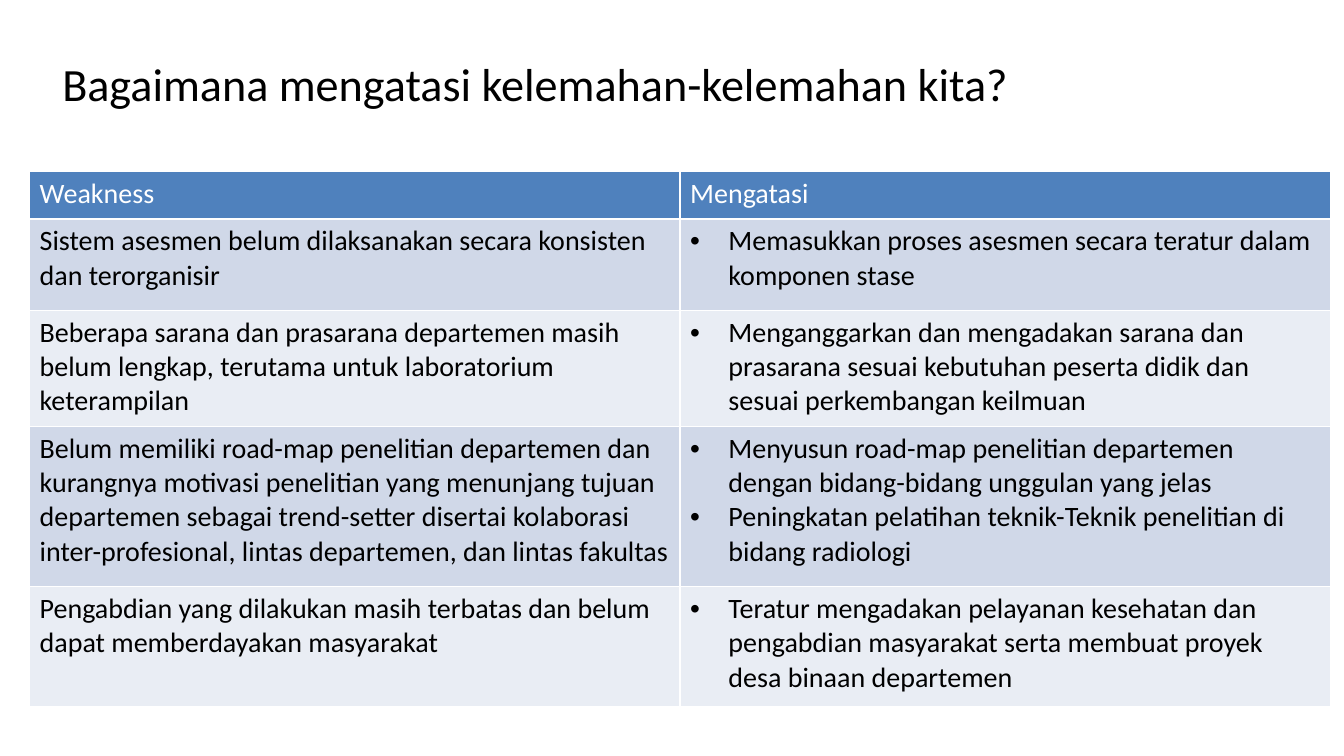
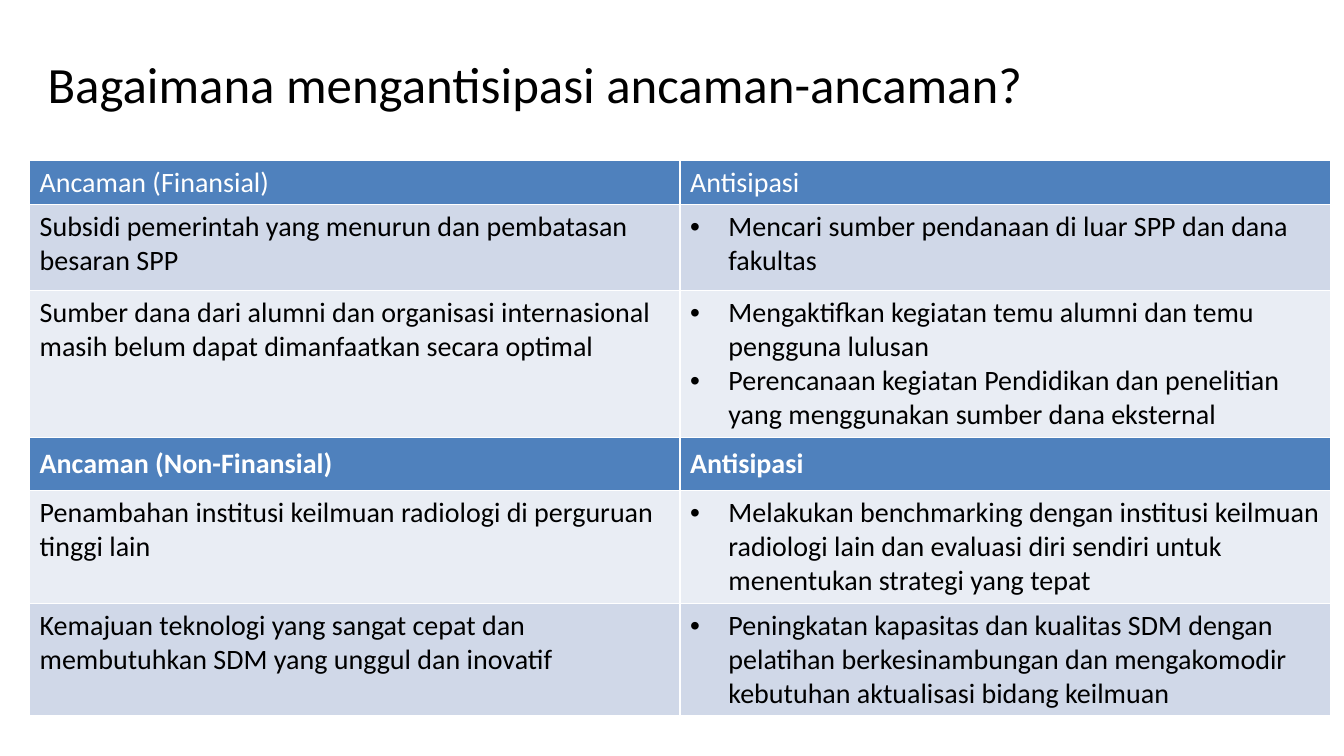
from dataclasses import dataclass

from lxml import etree
from pptx import Presentation
from pptx.dml.color import RGBColor
from pptx.enum.text import MSO_ANCHOR, PP_ALIGN
from pptx.oxml.ns import qn
from pptx.util import Emu, Inches, Pt

MIDDLE, TOP = MSO_ANCHOR.MIDDLE, MSO_ANCHOR.TOP
CENTER = PP_ALIGN.CENTER
WIDE, HIGH = Inches(13.33), Inches(7.5)


@dataclass(frozen=True)
class Theme:
    font: str = "Calibri"
    ink: str = "000000"
    paper: str = "FFFFFF"
    head: str = "4F81BD"
    bands: tuple[str, str] = ("E9EDF4", "D0D8E8")
    body: float = 20
    rule: float = 1
    indent: float = 0.38


@dataclass(frozen=True)
class Row:
    share: float
    issue: str
    steps: tuple[str, ...]
    head: bool = False
    bold: bool = False


@dataclass(frozen=True)
class Page:
    title: str
    size: float
    top: float
    rows: tuple[Row, ...]


THEME = Theme()

PAGES = (
    Page("Bagaimana mengatasi kelemahan-kelemahan kita?", 33, 22.7, (
        Row(6.27, "Weakness", ("Mengatasi",), head=True),
        Row(12.13, "Sistem asesmen belum dilaksanakan secara konsisten dan terorganisir",
            ("Memasukkan proses asesmen secara teratur dalam komponen stase",)),
        Row(15.33, "Beberapa sarana dan prasarana departemen masih belum lengkap, "
            "terutama untuk laboratorium keterampilan",
            ("Menganggarkan dan mengadakan sarana dan prasarana sesuai kebutuhan "
             "peserta didik dan sesuai perkembangan keilmuan",)),
        Row(21.2, "Belum memiliki road-map penelitian departemen dan kurangnya motivasi "
            "penelitian yang menunjang tujuan departemen sebagai trend-setter disertai "
            "kolaborasi inter-profesional, lintas departemen, dan lintas fakultas",
            ("Menyusun road-map penelitian departemen dengan bidang-bidang unggulan yang jelas",
             "Peningkatan pelatihan teknik-Teknik penelitian di bidang radiologi")),
        Row(15.87, "Pengabdian yang dilakukan masih terbatas dan belum dapat "
            "memberdayakan masyarakat",
            ("Teratur mengadakan pelayanan kesehatan dan pengabdian masyarakat serta "
             "membuat proyek desa binaan departemen",)),
    )),
    Page("Bagaimana mengantisipasi ancaman-ancaman?", 36.3, 21.2, (
        Row(5.87, "Ancaman (Finansial)", ("Antisipasi",), head=True),
        Row(11.33, "Subsidi pemerintah yang menurun dan pembatasan besaran SPP",
            ("Mencari sumber pendanaan di luar SPP dan dana fakultas",)),
        Row(19.44, "Sumber dana dari alumni dan organisasi internasional masih belum "
            "dapat dimanfaatkan secara optimal",
            ("Mengaktifkan kegiatan temu alumni dan temu pengguna lulusan",
             "Perencanaan kegiatan Pendidikan dan penelitian yang menggunakan "
             "sumber dana eksternal")),
        Row(7.07, "Ancaman (Non-Finansial)", ("Antisipasi",), head=True, bold=True),
        Row(14.93, "Penambahan institusi keilmuan radiologi di perguruan tinggi lain",
            ("Melakukan benchmarking dengan institusi keilmuan radiologi lain dan "
             "evaluasi diri sendiri untuk menentukan strategi yang tepat",)),
        Row(14.8, "Kemajuan teknologi yang sangat cepat dan membutuhkan SDM yang "
            "unggul dan inovatif",
            ("Peningkatan kapasitas dan kualitas SDM dengan pelatihan berkesinambungan "
             "dan mengakomodir kebutuhan aktualisasi bidang keilmuan",)),
    )),
)


def across(share: float) -> Emu:
    return Emu(round(WIDE * share / 100))


def down(share: float) -> Emu:
    return Emu(round(HIGH * share / 100))


def add_run(para, text: str, size: float, color: str, bold: bool = False) -> None:
    run = para.add_run()
    run.text = text
    font = run.font
    font.name, font.size, font.bold = THEME.font, Pt(size), bold
    font.color.rgb = RGBColor.from_string(color)


def add_bullet(para) -> None:
    props = para._p.get_or_add_pPr()
    props.set("marL", str(Inches(THEME.indent)))
    props.set("indent", str(-Inches(THEME.indent)))
    etree.SubElement(props, qn("a:buFont"), typeface="Arial")
    etree.SubElement(props, qn("a:buChar"), char="•")


def add_rules(cell) -> None:
    props = cell._tc.get_or_add_tcPr()
    for side in "LRTB":
        line = etree.SubElement(props, qn(f"a:ln{side}"), w=str(Pt(THEME.rule)))
        fill = etree.SubElement(line, qn("a:solidFill"))
        etree.SubElement(fill, qn("a:srgbClr"), val=THEME.paper)


def fill_cell(cell, row: Row, texts: tuple[str, ...], fill: str, listed: bool) -> None:
    add_rules(cell)
    cell.fill.solid()
    cell.fill.fore_color.rgb = RGBColor.from_string(fill)
    cell.vertical_anchor = MIDDLE if row.bold else TOP
    frame = cell.text_frame
    for i, text in enumerate(texts):
        para = frame.add_paragraph() if i else frame.paragraphs[0]
        if listed:
            add_bullet(para)
        add_run(para, text, THEME.body, THEME.paper if row.head else THEME.ink, row.bold)


def add_title(slide, page: Page) -> None:
    box = slide.shapes.add_textbox(across(1.35), down(4.13), across(76.97), down(13.73))
    frame = box.text_frame
    frame.word_wrap = True
    frame.vertical_anchor = MIDDLE
    para = frame.paragraphs[0]
    para.alignment = CENTER
    add_run(para, page.title, page.size, THEME.ink)


def add_grid(slide, page: Page) -> None:
    total = sum(row.share for row in page.rows)
    table = slide.shapes.add_table(
        len(page.rows), 2, across(2.2), down(page.top), across(96.8), down(total)
    ).table
    table.first_row = table.horz_banding = False
    for i, row in enumerate(page.rows):
        table.rows[i].height = down(row.share)
        fill = THEME.head if row.head else THEME.bands[i % 2]
        fill_cell(table.cell(i, 0), row, (row.issue,), fill, False)
        fill_cell(table.cell(i, 1), row, row.steps, fill, not row.head)


def main() -> None:
    deck = Presentation()
    deck.slide_width, deck.slide_height = WIDE, HIGH
    for page in PAGES:
        slide = deck.slides.add_slide(deck.slide_layouts[6])
        add_title(slide, page)
        add_grid(slide, page)
    deck.save("out.pptx")


if __name__ == "__main__":
    main()
